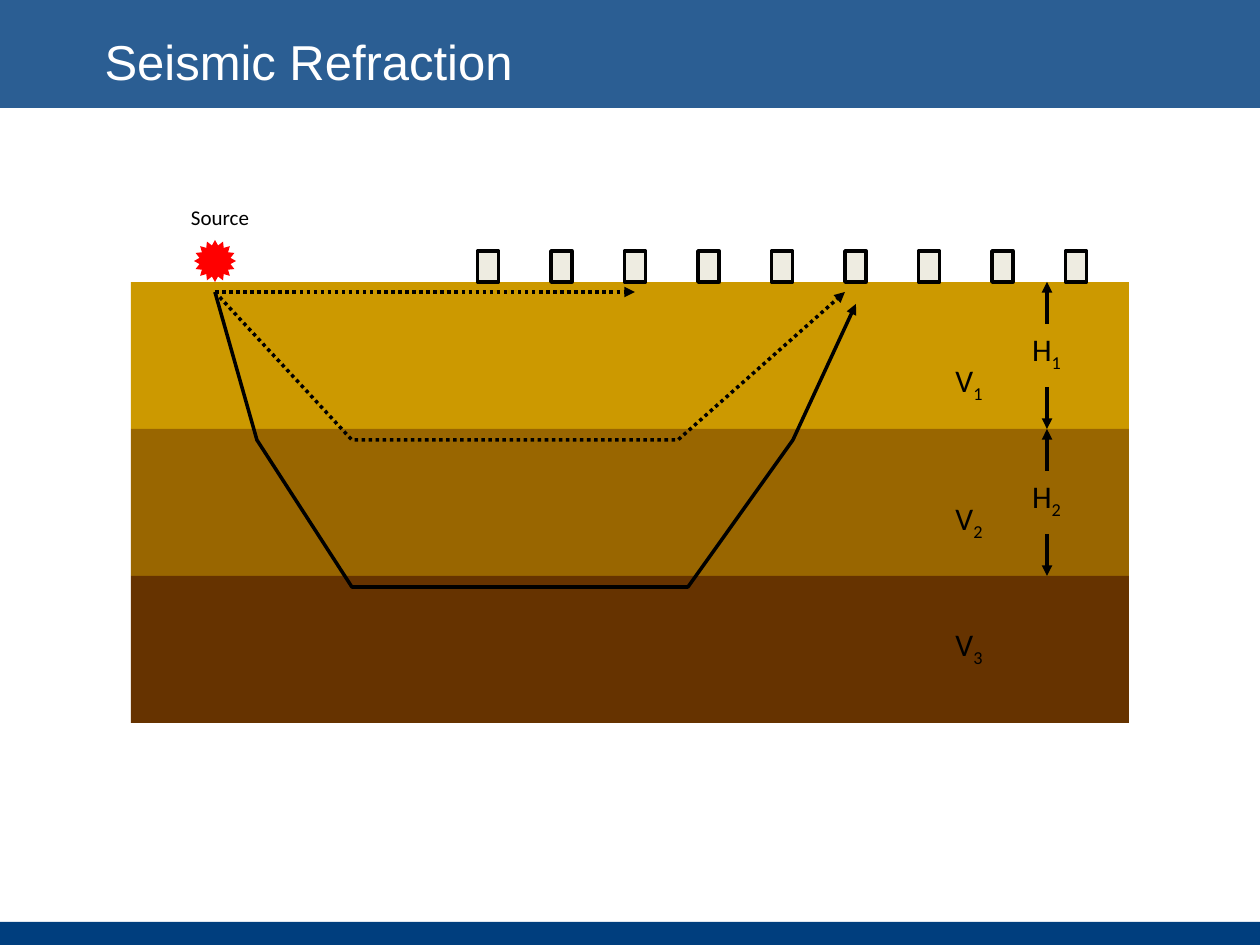
from lxml import etree
from pptx import Presentation
from pptx.dml.color import RGBColor
from pptx.enum.dml import MSO_LINE
from pptx.enum.shapes import MSO_CONNECTOR, MSO_SHAPE
from pptx.enum.text import MSO_ANCHOR, PP_ALIGN
from pptx.oxml.ns import qn
from pptx.util import Emu, Pt

EMU_PER_PX = 914400 / 126

NAVY = RGBColor(0x00, 0x3E, 0x7E)
WHITE = RGBColor(0xFF, 0xFF, 0xFF)
BLACK = RGBColor(0x00, 0x00, 0x00)
RED = RGBColor(0xFF, 0x00, 0x00)
CREAM = RGBColor(0xEE, 0xEC, 0xE1)
LAYER_COLORS = (
    RGBColor(0xCC, 0x99, 0x00),
    RGBColor(0x99, 0x66, 0x00),
    RGBColor(0x66, 0x33, 0x00),
)


def px(value):
    return Emu(round(value * EMU_PER_PX))


def format_run(run, size=18, font="Calibri", color=BLACK, subscript=False):
    run.font.size = Pt(size)
    run.font.name = font
    run.font.color.rgb = color
    if subscript:
        run._r.get_or_add_rPr().set("baseline", "-25000")


class SlideBuilder:
    line_width = Pt(2)

    def __init__(self, slide):
        self.slide = slide
        self.shapes = slide.shapes

    def title(self, text, left, top, width, height):
        shape = self.shapes.title
        shape.left, shape.top = px(left), px(top)
        shape.width, shape.height = px(width), px(height)
        frame = shape.text_frame
        frame.vertical_anchor = MSO_ANCHOR.MIDDLE
        paragraph = frame.paragraphs[0]
        paragraph.alignment = PP_ALIGN.LEFT
        run = paragraph.add_run()
        run.text = text
        format_run(run, size=28, font="Arial", color=WHITE)
        # Bring the title in front of the bands
        self.shapes._spTree.append(shape._element)

    def block(self, left, top, width, height, fill, kind=MSO_SHAPE.RECTANGLE,
              outline=None, opacity=None):
        shape = self.shapes.add_shape(kind, px(left), px(top), px(width), px(height))
        shape.shadow.inherit = False
        shape.fill.solid()
        shape.fill.fore_color.rgb = fill
        if opacity is not None:
            color = shape._element.spPr.find(".//" + qn("a:srgbClr"))
            etree.SubElement(color, qn("a:alpha"), val=str(opacity * 1000))
        if outline is None:
            shape.line.fill.background()
        else:
            shape.line.color.rgb = outline
            shape.line.width = self.line_width
        return shape

    def label(self, text, left, top, width, height, size=18, subscript=None):
        frame = self.shapes.add_textbox(px(left), px(top), px(width), px(height)).text_frame
        frame.word_wrap = False
        paragraph = frame.paragraphs[0]
        paragraph.alignment = PP_ALIGN.CENTER
        run = paragraph.add_run()
        run.text = text
        format_run(run, size=size)
        if subscript:
            run = paragraph.add_run()
            run.text = subscript
            format_run(run, size=size, subscript=True)

    def style_arrow(self, shape, dotted):
        shape.line.color.rgb = BLACK
        shape.line.width = self.line_width
        if dotted:
            shape.line.dash_style = MSO_LINE.ROUND_DOT
        etree.SubElement(shape.line._get_or_add_ln(), qn("a:tailEnd"), type="triangle")

    def arrow(self, start, end, dotted=False):
        connector = self.shapes.add_connector(
            MSO_CONNECTOR.STRAIGHT, *(px(value) for value in (*start, *end)))
        self.style_arrow(connector, dotted)
        etree.SubElement(connector._element.spPr, qn("a:effectLst"))

    def ray(self, points, dotted=False):
        builder = self.shapes.build_freeform(*points[0], scale=EMU_PER_PX)
        builder.add_line_segments(points[1:], close=False)
        shape = builder.convert_to_shape()
        shape.shadow.inherit = False
        shape.fill.background()
        self.style_arrow(shape, dotted)


def main():
    presentation = Presentation()
    presentation.slide_width, presentation.slide_height = px(1260), px(945)
    builder = SlideBuilder(presentation.slides.add_slide(presentation.slide_layouts[5]))

    # Bands and title
    builder.block(0, 922, 1260, 23, NAVY)
    builder.block(0, 0, 1260, 108, NAVY, opacity=83)
    builder.title("Seismic Refraction", 92, 24, 853, 73)

    # Ground layers with their velocities
    surface, thickness = 282, 147
    for index, color in enumerate(LAYER_COLORS):
        builder.block(131, surface + index * thickness, 998, thickness, color)
    for index, top in enumerate((355, 493, 619), start=1):
        builder.label("V", 940, top, 58, 50, subscript=str(index))

    # Source and geophones
    builder.label("Source", 174, 198, 92, 38, size=12)
    star = builder.block(194, 240, 42, 42, RED, kind=MSO_SHAPE.STAR_16_POINT)
    star.adjustments[0] = 0.375
    for index in range(9):
        builder.block(477.5 + index * 73.5, 251, 21, 31, CREAM, outline=BLACK)

    # Layer thicknesses
    for index in range(2):
        top = surface + index * thickness
        bottom = top + thickness
        builder.arrow((1047, top + 42), (1047, top))
        builder.arrow((1047, bottom - 42), (1047, bottom))
        builder.label("H", 1017, top + 42, 59, 50, subscript=str(index + 1))

    # Direct wave and the two refracted waves
    origin = (215, 292)
    builder.arrow(origin, (635, 292), dotted=True)
    builder.ray([origin, (352, 440), (678, 440), (845, 292)], dotted=True)
    builder.ray([origin, (257, 440), (352, 587), (688, 587), (793, 440), (856, 304)])

    presentation.save("out.pptx")


if __name__ == "__main__":
    main()
